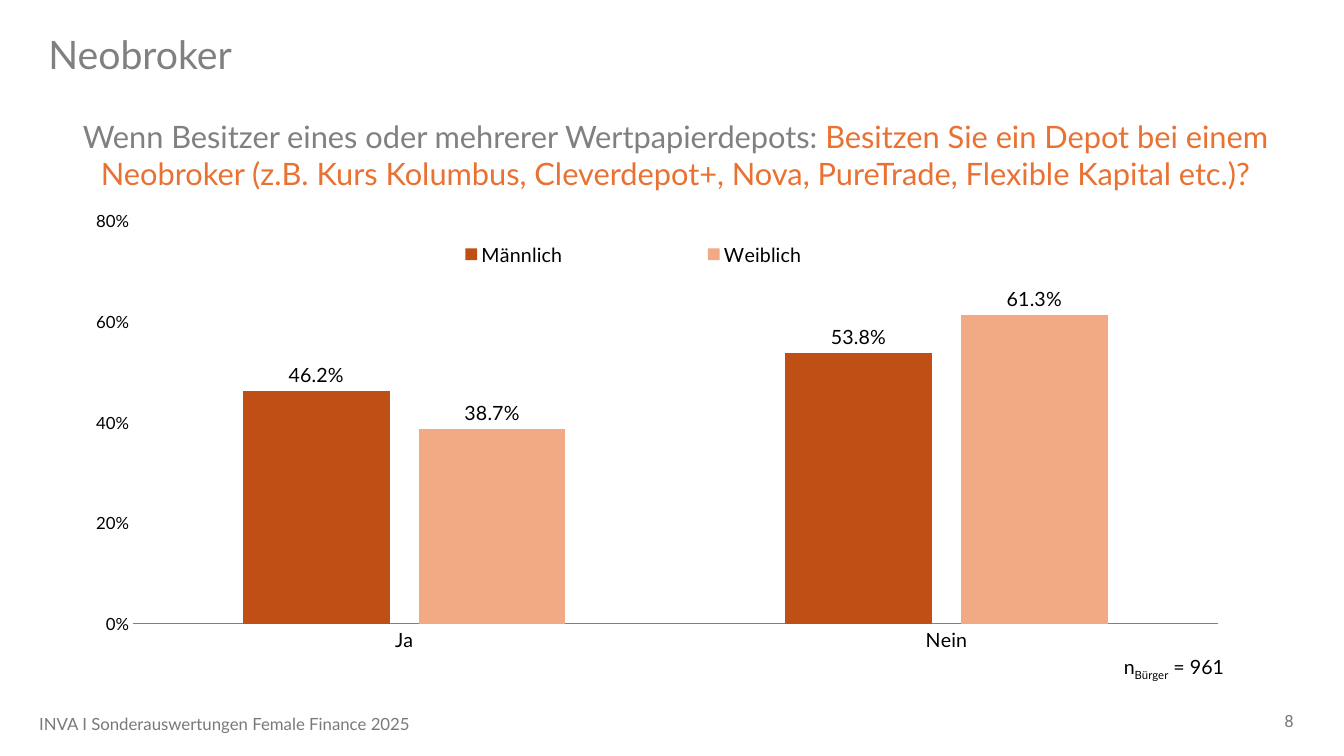
"""Build the Neobroker slide: a question, a clustered column chart and a footer."""
from dataclasses import dataclass
from typing import Any, NamedTuple, Optional

from pptx import Presentation
from pptx.chart.data import CategoryChartData
from pptx.dml.color import RGBColor
from pptx.enum.chart import XL_CHART_TYPE, XL_LABEL_POSITION, XL_LEGEND_POSITION, XL_TICK_MARK
from pptx.enum.text import MSO_ANCHOR, PP_ALIGN
from pptx.oxml import parse_xml
from pptx.oxml.ns import nsdecls
from pptx.util import Inches, Pt

LEFT, CENTER, RIGHT = PP_ALIGN.LEFT, PP_ALIGN.CENTER, PP_ALIGN.RIGHT
TOP, MIDDLE = MSO_ANCHOR.TOP, MSO_ANCHOR.MIDDLE
COLUMNS = XL_CHART_TYPE.COLUMN_CLUSTERED
OUTSIDE_END = XL_LABEL_POSITION.OUTSIDE_END
LEGEND_RIGHT = XL_LEGEND_POSITION.RIGHT
NO_TICK = XL_TICK_MARK.NONE

WIDTH, HEIGHT = Inches(13.33), Inches(7.5)
COLORS = {"grey": "808080", "footer": "797979", "accent": "E97132",
          "male": "C04F15", "female": "F2AA84", "text": "000000"}


class Box(NamedTuple):
    """Left, top, width and height in percent of the surrounding area."""
    left: float
    top: float
    width: float
    height: float


class Span(NamedTuple):
    """A piece of text with its colour and baseline shift."""
    text: str
    color: str
    baseline: int = 0


class Series(NamedTuple):
    """A named chart series."""
    name: str
    color: str
    values: tuple[float, ...]


@dataclass
class Label:
    """A line of text and its place on the slide."""
    box: Box
    spans: list[Span]
    size: int
    align: PP_ALIGN = LEFT
    anchor: MSO_ANCHOR = TOP
    font: str = "Lato"
    spacing: Optional[float] = None


TITLE = Label(Box(2.85, 4, 94.75, 7.07), [Span("Neobroker", "grey")], 28,
              anchor=MIDDLE, spacing=0.9)
LABELS = [
    Label(Box(2.85, 14.93, 94.82, 11.2), [
        Span("Wenn Besitzer eines oder mehrerer Wertpapierdepots: ", "grey"),
        Span("Besitzen Sie ein Depot bei einem Neobroker (z.B. Kurs Kolumbus, "
             "Cleverdepot+, Nova, PureTrade, Flexible Kapital etc.)?", "accent"),
    ], 22, CENTER),
    Label(Box(77.79, 86, 14.03, 4.53), [
        Span("n", "text"), Span("Bürger", "text", -25000), Span(" = 961", "text"),
    ], 14, RIGHT),
    Label(Box(74.49, 92.67, 22.51, 5.33), [Span("8", "footer")], 12, RIGHT, MIDDLE, "Roboto"),
    Label(Box(2.18, 93.07, 50.26, 5.33),
          [Span("INVA I Sonderauswertungen Female Finance 2025", "footer")], 12, anchor=MIDDLE),
]

CHART_BOX = Box(4.28, 23.6, 89.27, 68.27)
PLOT_BOX = Box(6.3, 8.2, 90.4, 78.1)
LEGEND_BOX = Box(22.4, 10.7, 51.2, 8)
CATEGORIES = ("Ja", "Nein")
SERIES = [Series("Männlich", "male", (0.462, 0.538)),
          Series("Weiblich", "female", (0.387, 0.613))]


def rgb(name: str) -> RGBColor:
    """Look up a colour."""
    return RGBColor.from_string(COLORS[name])


def apply(target: Any, **formats: Any) -> None:
    """Set attributes from format values."""
    for name, value in formats.items():
        setattr(target, name, value)


def place(box: Box) -> dict[str, int]:
    """Turn slide percentages into lengths."""
    sides = (WIDTH, HEIGHT, WIDTH, HEIGHT)
    return {name: round(side * share / 100)
            for name, side, share in zip(Box._fields, sides, box)}


def write(sp: Any, label: Label) -> None:
    """Place a shape and fill it with the label's text."""
    apply(sp, **place(label.box))
    tf = sp.text_frame
    apply(tf, word_wrap=True, vertical_anchor=label.anchor)
    p = tf.paragraphs[0]
    apply(p, alignment=label.align, line_spacing=label.spacing)
    for span in label.spans:
        r = p.add_run()
        r.text = span.text
        apply(r.font, name=label.font, size=Pt(label.size))
        r.font.color.rgb = rgb(span.color)
        if span.baseline:
            r.font._element.set("baseline", str(span.baseline))


def layout_xml(box: Box, inner: bool = False) -> Any:
    """Build a manual chart layout."""
    target = '<c:layoutTarget val="inner"/>' if inner else ""
    modes = '<c:xMode val="edge"/><c:yMode val="edge"/>'
    sizes = "".join(f'<c:{tag} val="{share / 100:.3f}"/>' for tag, share in zip("xywh", box))
    return parse_xml(f'<c:layout {nsdecls("c")}><c:manualLayout>{target}{modes}{sizes}'
                     "</c:manualLayout></c:layout>")


def add_columns(slide: Any) -> None:
    """Add the clustered column chart."""
    data = CategoryChartData(number_format="0.0%")
    data.categories = CATEGORIES
    for series in SERIES:
        data.add_series(series.name, series.values)
    chart = slide.shapes.add_chart(COLUMNS, *place(CHART_BOX).values(), data).chart
    apply(chart, has_title=False, has_legend=True)
    apply(chart.font, name="Lato", size=Pt(14))
    chart.font.color.rgb = rgb("text")

    legend = chart.legend
    legend.position = LEGEND_RIGHT
    legend._element.insert(1, layout_xml(LEGEND_BOX))
    legend.include_in_layout = False

    area = chart._chartSpace.chart.plotArea
    for old in area.findall("{*}layout"):
        area.remove(old)
    area.insert(0, layout_xml(PLOT_BOX, inner=True))

    plot = chart.plots[0]
    apply(plot, gap_width=150, overlap=-20, vary_by_categories=False, has_data_labels=True)
    apply(plot.data_labels, show_value=True, number_format="0.0%",
          number_format_is_linked=False, position=OUTSIDE_END)
    for drawn, series in zip(plot.series, SERIES):
        drawn.format.fill.solid()
        drawn.format.fill.fore_color.rgb = rgb(series.color)

    ticks = {"major_tick_mark": NO_TICK, "minor_tick_mark": NO_TICK, "has_major_gridlines": False}
    apply(chart.category_axis, **ticks)
    chart.category_axis.format.line.color.rgb = rgb("grey")
    axis = chart.value_axis
    apply(axis, **ticks, minimum_scale=0, maximum_scale=0.8, major_unit=0.2)
    apply(axis.tick_labels, number_format="0%", number_format_is_linked=False)
    axis.tick_labels.font.size = Pt(12)
    axis.format.line.fill.background()


def main() -> None:
    """Draw the slide and save it."""
    prs = Presentation()
    apply(prs, slide_width=WIDTH, slide_height=HEIGHT)
    slide = prs.slides.add_slide(prs.slide_layouts[5])
    write(slide.shapes.title, TITLE)
    add_columns(slide)
    for label in LABELS:
        write(slide.shapes.add_textbox(*place(label.box).values()), label)
    prs.save("out.pptx")


if __name__ == "__main__":
    main()
